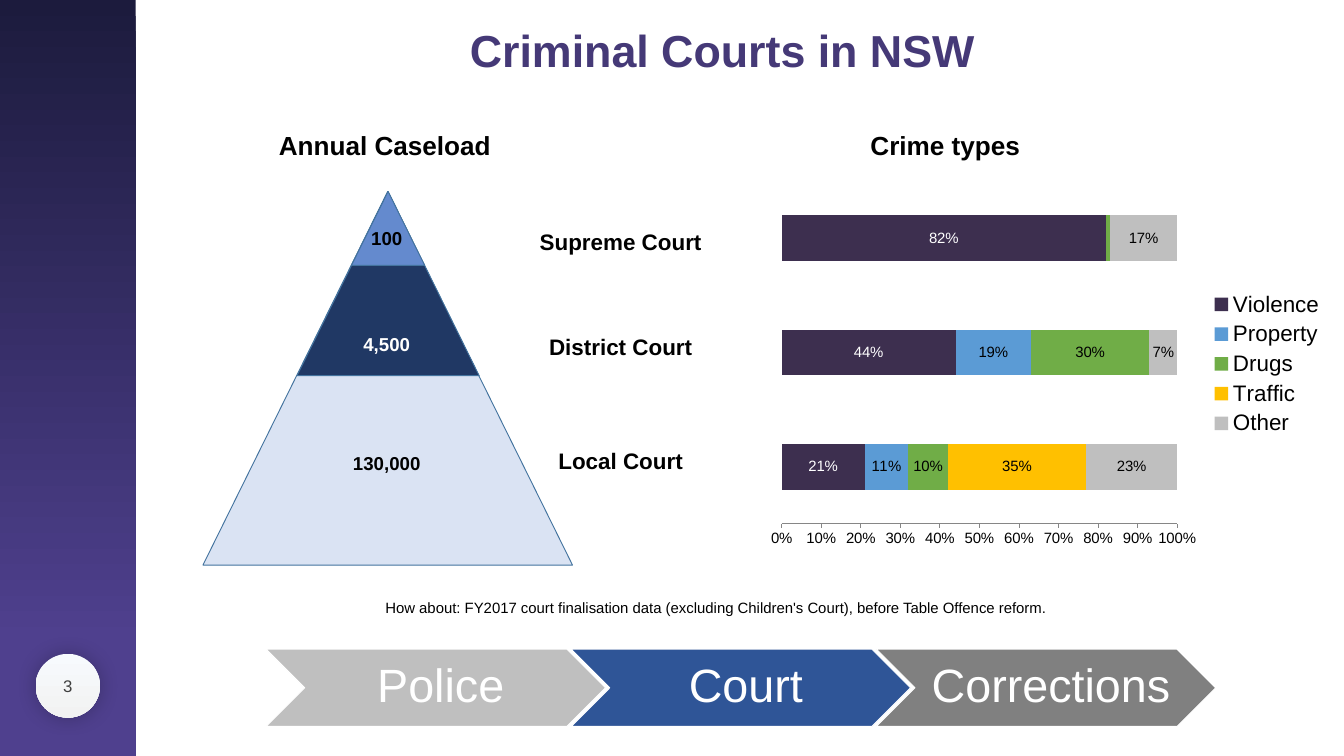
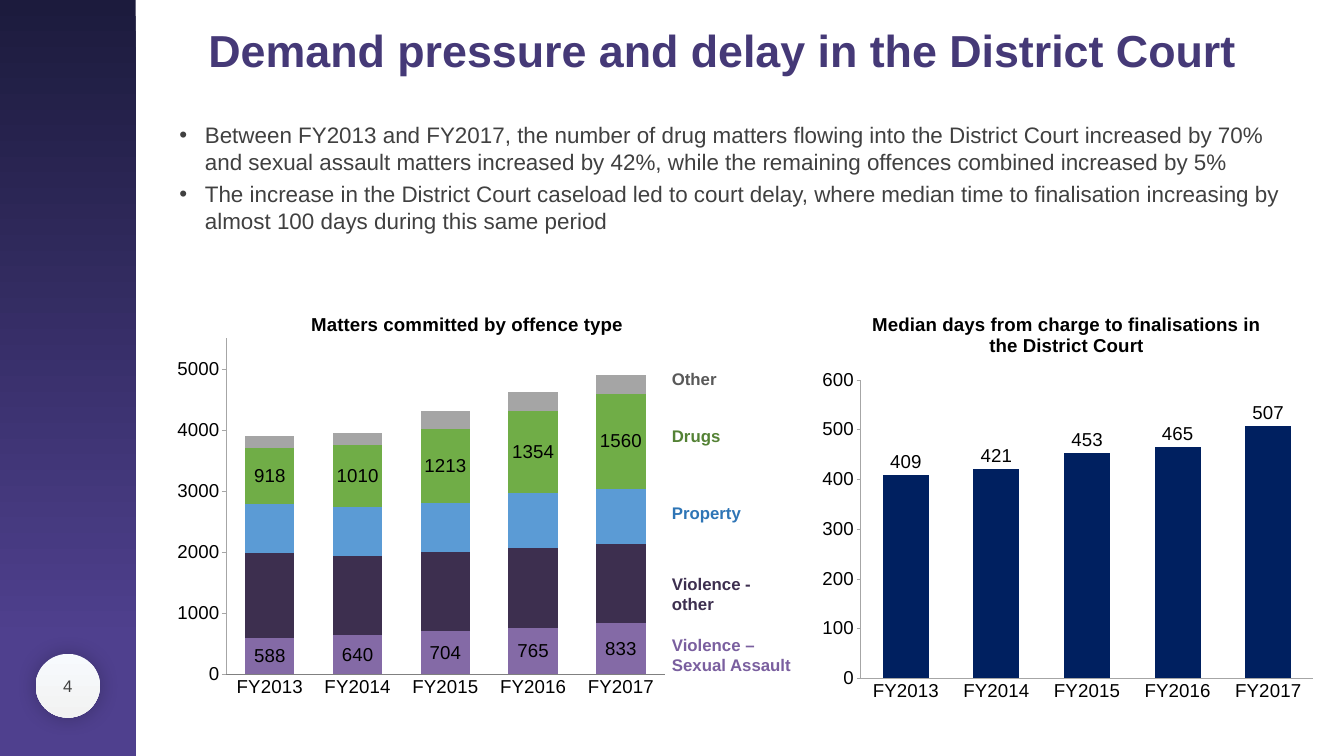
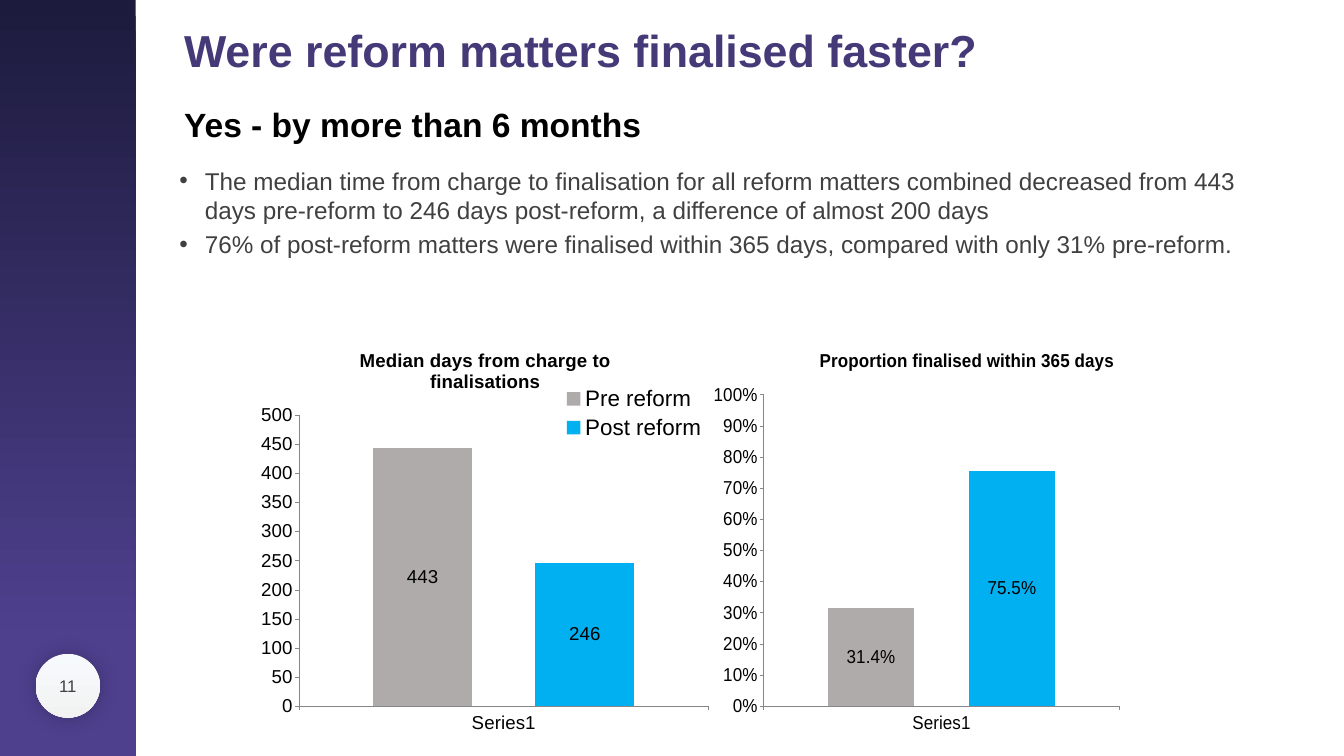
from lxml import etree
from pptx import Presentation
from pptx.chart.data import CategoryChartData
from pptx.dml.color import RGBColor
from pptx.enum.chart import (XL_AXIS_CROSSES, XL_CHART_TYPE, XL_LABEL_POSITION,
                             XL_LEGEND_POSITION, XL_TICK_LABEL_POSITION, XL_TICK_MARK)
from pptx.enum.shapes import MSO_SHAPE
from pptx.enum.text import MSO_ANCHOR, PP_ALIGN
from pptx.oxml.ns import qn
from pptx.util import Pt

PX = 9144  # EMU per px, 100 px to the inch
LEFT, CENTER = PP_ALIGN.LEFT, PP_ALIGN.CENTER
TOP, MIDDLE = MSO_ANCHOR.TOP, MSO_ANCHOR.MIDDLE
RECTANGLE, OVAL = MSO_SHAPE.RECTANGLE, MSO_SHAPE.OVAL
TRIANGLE, CHEVRON = MSO_SHAPE.ISOSCELES_TRIANGLE, MSO_SHAPE.CHEVRON
COLUMN, STACKED = XL_CHART_TYPE.COLUMN_CLUSTERED, XL_CHART_TYPE.COLUMN_STACKED
BAR_100 = XL_CHART_TYPE.BAR_STACKED_100
LABEL_CENTER, LABEL_ABOVE = XL_LABEL_POSITION.CENTER, XL_LABEL_POSITION.OUTSIDE_END
LEGEND_RIGHT, LEGEND_CORNER = XL_LEGEND_POSITION.RIGHT, XL_LEGEND_POSITION.CORNER
TICK_NONE, TICK_OUT = XL_TICK_MARK.NONE, XL_TICK_MARK.OUTSIDE
LABELS_LOW = XL_TICK_LABEL_POSITION.LOW
CROSS_MAX = XL_AXIS_CROSSES.MAXIMUM

FONT = "Arial"
BLACK, WHITE, BODY = "000000", "FFFFFF", "404040"
TITLE_COLOR = "453977"
BAND = ((0, "1C1B3D"), (0.85, "4F408E"))
BADGE = ((0, "F7FAFD"), (1, "F2F2F2"))
VIOLENCE, PROPERTY, DRUGS = "3D2F4F", "5B9BD5", "70AD47"
PRE, POST = "AFABAB", "00B0F0"
AXIS, PALE_AXIS = "868686", "A6A6A6"

# Slide 1: caseload pyramid, crime types and the justice chain
COURTS = [("Supreme Court", 334), ("District Court", 491), ("Local Court", 661)]
TIERS = [(556, "DAE3F3"), (274, "203864"), (110, "648ACE")]
PYRAMID_CENTER, PYRAMID_TOP = 577, 285
CASELOADS = [("100", 333, BLACK), ("4,500", 490, WHITE), ("130,000", 668, BLACK)]
HEADINGS = [("Annual Caseload", 228), ("Crime types", 1062)]
SOURCE_NOTE = ("How about: FY2017 court finalisation data (excluding Children's Court), "
               "before Table Offence reform.")
STAGES = [("Police", "BFBFBF"), ("Court", "2F5597"), ("Corrections", "808080")]
CRIME_TYPES = dict(
    kind=BAR_100, box=(1129, 258, 853, 567), plot=(0.04, 0.02, 0.69, 0.9),
    categories=["1", "2", "3"], gap=150, overlap=100, size=16, number_format="0%",
    hide_categories=True, legend=LEGEND_RIGHT,
    series=[("Violence", [0.21, 0.44, 0.82], VIOLENCE, WHITE),
            ("Property", [0.11, 0.19, 0], PROPERTY, BLACK),
            ("Drugs", [0.1, 0.3, 0.01], DRUGS, BLACK),
            ("Traffic", [0.35, 0, 0], "FFC000", BLACK),
            ("Other", [0.23, 0.07, 0.17], "BFBFBF", BLACK)],
    smallest_label=0.05)

# Slide 2: demand and delay
YEARS = ["FY2013", "FY2014", "FY2015", "FY2016", "FY2017"]
DEMAND = [
    "Between FY2013 and FY2017, the number of drug matters flowing into the District Court "
    "increased by 70% and sexual assault matters increased by 42%, while the remaining "
    "offences combined increased by 5%",
    "The increase in the District Court caseload led to court delay, where median time to "
    "finalisation increasing by almost 100 days during this same period"]
OFFENCES = [("Other", 544, 164, "595959"), ("Drugs", 628, 164, "548235"),
            ("Property", 743, 164, "2E75B6"), ("Violence - other", 849, 164, VIOLENCE),
            ("Violence – Sexual Assault", 940, 201, "7A5F9F")]
COMMITTED = dict(
    kind=STACKED, box=(235, 442, 920, 617), plot=(0.11, 0.1, 0.71, 0.81),
    title="Matters committed by offence type", categories=YEARS, gap=78, overlap=100,
    scale=(0, 5500, 1000), category_line="808080", value_line=PALE_AXIS,
    category_tick=TICK_NONE,
    series=[("Violence – Sexual Assault", [588, 640, 704, 765, 833], "846AA6", BLACK),
            ("Violence - other", [1400, 1300, 1300, 1300, 1300], VIOLENCE, None),
            ("Property", [800, 800, 800, 900, 900], PROPERTY, None),
            ("Drugs", [918, 1010, 1213, 1354, 1560], DRUGS, BLACK),
            ("Other", [200, 200, 300, 300, 300], "A5A5A5", None)])
DELAY = dict(
    kind=COLUMN, box=(1204, 442, 766, 617), plot=(0.1, 0.2, 0.88, 0.72),
    title="Median days from charge to finalisations in the District Court",
    categories=YEARS, gap=97, scale=(0, 600, 100), number_format="#,##0",
    category_line=PALE_AXIS, value_line=PALE_AXIS, category_tick=TICK_NONE,
    label_position=LABEL_ABOVE,
    series=[("Median days", [409, 421, 453, 465, 507], "002060", BLACK)])

# Slide 3: effect of the reform
EFFECTS = [
    "The median time from charge to finalisation for all reform matters combined decreased "
    "from 443 days pre-reform to 246 days post-reform, a difference of almost 200 days",
    "76% of post-reform matters were finalised within 365 days, compared with only 31% "
    "pre-reform."]
REFORM = dict(kind=COLUMN, categories=["Series1"], gap=150, overlap=-64,
              label_position=LABEL_CENTER, low_labels=True)
REFORM_DAYS = dict(
    REFORM, box=(376, 496, 692, 610), plot=(0.1, 0.2, 0.88, 0.71),
    title="Median days from charge to finalisations", scale=(0, 500, 50),
    legend=LEGEND_CORNER, legend_box=(0.66, 0.12, 0.32, 0.15),
    series=[("Pre reform", [443], PRE, BLACK), ("Post reform", [246], POST, BLACK)])
REFORM_SHARE = dict(
    REFORM, box=(1062, 496, 692, 610), plot=(0.02, 0.15, 0.84, 0.76),
    title="Proportion finalised within 365 days", scale=(0, 1, 0.1), number_format="0%",
    label_format="0.0%", values_on_right=True,
    series=[("Pre reform", [0.314], PRE, BLACK), ("Post reform", [0.755], POST, BLACK)])


def rgb(color):
    return RGBColor.from_string(color)


def emu(box):
    return [length * PX for length in box]


def style(font, size, color, bold=False):
    font.name, font.size, font.bold = FONT, Pt(size), bold
    font.color.rgb = rgb(color)


def add_xml(parent, tag, **attributes):
    return etree.SubElement(parent, qn(tag), {k: str(v) for k, v in attributes.items()})


def add_shape(slide, preset, box, fill, line=None):
    """Add a flat shape; fill is a colour or a pair of gradient stops."""
    shape = slide.shapes.add_shape(preset, *emu(box))
    shape.shadow.inherit = False
    if isinstance(fill, str):
        shape.fill.solid()
        shape.fill.fore_color.rgb = rgb(fill)
    else:
        shape.fill.gradient()
        shape.fill.gradient_angle = 270
        for stop, (position, color) in zip(shape.fill.gradient_stops, fill):
            stop.position = position
            stop.color.rgb = rgb(color)
    if line:
        shape.line.color.rgb = rgb(line)
        shape.line.width = Pt(1)
    else:
        shape.line.fill.background()
    return shape


def add_text(slide, text, box, size, color=BLACK, bold=False, align=CENTER, anchor=TOP):
    frame = slide.shapes.add_textbox(*emu(box)).text_frame
    frame.word_wrap = True
    frame.vertical_anchor = anchor
    frame.text = text
    for paragraph in frame.paragraphs:
        paragraph.alignment = align
        style(paragraph.font, size, color, bold)
    return frame


def add_bullets(slide, points, top, size):
    frame = add_text(slide, "\n".join(points), (257, top, 1672, 180), size, BODY, align=LEFT)
    for paragraph in frame.paragraphs:
        paragraph.space_after = Pt(6)
        properties = paragraph._p.get_or_add_pPr()
        properties.set("marL", str(38 * PX))
        properties.set("indent", str(-38 * PX))
        add_xml(properties, "a:buFont", typeface=FONT)
        add_xml(properties, "a:buChar", char="•")


def add_slide(deck, number, title, align=CENTER):
    """Add a slide with the side band, number badge and title."""
    slide = deck.slides.add_slide(deck.slide_layouts[6])
    add_shape(slide, RECTANGLE, (0, 0, 202, 1125), BAND)
    badge = add_shape(slide, OVAL, (53, 973, 96, 95), BADGE)
    glow = add_xml(badge._element.spPr.find(qn("a:effectLst")), "a:outerShdw",
                   blurRad=Pt(22), dist=0, dir=0, algn="ctr", rotWithShape=0)
    add_xml(add_xml(glow, "a:srgbClr", val=BLACK), "a:alpha", val=24000)
    add_text(slide, number, (53, 981, 96, 78), 18, BODY, anchor=MIDDLE)
    add_text(slide, title, (264, 29, 1622, 91), 48, TITLE_COLOR, True, align)
    return slide


def set_layout(parent, index, box, inner=False):
    """Fix a chart part at fractions of the chart's size."""
    for previous in parent.findall(qn("c:layout")):
        parent.remove(previous)
    layout = etree.Element(qn("c:layout"))
    parent.insert(index, layout)
    manual = add_xml(layout, "c:manualLayout")
    if inner:
        add_xml(manual, "c:layoutTarget", val="inner")
    for side in "xy":
        add_xml(manual, f"c:{side}Mode", val="edge")
    for side, fraction in zip("xywh", box):
        add_xml(manual, f"c:{side}", val=fraction)


def style_series(series, color, label_color, size, label_format, position, smallest):
    series.format.fill.solid()
    series.format.fill.fore_color.rgb = rgb(color)
    series.invert_if_negative = False
    if not label_color:
        return
    labels = series.data_labels
    labels.show_value = True
    labels.number_format, labels.number_format_is_linked = label_format, False
    style(labels.font, size, label_color)
    if position is not None:
        labels.position = position
    hidden = [i for i, value in enumerate(series.values) if value < smallest]
    for place, index in enumerate(hidden):
        label = etree.Element(qn("c:dLbl"))
        labels._element.insert(place, label)
        add_xml(label, "c:idx", val=index)
        add_xml(label, "c:delete", val=1)


def style_axis(axis, line, tick):
    axis.has_major_gridlines = False
    axis.major_tick_mark, axis.minor_tick_mark = tick, TICK_NONE
    axis.format.line.color.rgb = rgb(line)
    axis.format.line.width = Pt(0.75)


def add_chart(slide, kind, box, plot, categories, series, gap, overlap=0, title=None, size=20,
              scale=None, number_format="General", label_format=None, label_position=None,
              smallest_label=0, legend=None, legend_box=None, hide_categories=False,
              low_labels=False, values_on_right=False, category_line=AXIS, value_line=AXIS,
              category_tick=TICK_OUT):
    data = CategoryChartData()
    data.categories = categories
    for name, values, *_ in series:
        data.add_series(name, values)
    chart = slide.shapes.add_chart(kind, *emu(box), data).chart
    style(chart.font, size, BLACK)

    chart.has_title = bool(title)
    if title:
        chart.chart_title.include_in_layout = False
        chart.chart_title.text_frame.text = title
        style(chart.chart_title.text_frame.paragraphs[0].font, size, BLACK, True)

    bars = chart.plots[0]
    bars.gap_width, bars.overlap, bars.vary_by_categories = gap, overlap, False
    for drawn, (_, _, color, label_color) in zip(bars.series, series):
        style_series(drawn, color, label_color, size, label_format or number_format,
                     label_position, smallest_label)

    category_axis, value_axis = chart.category_axis, chart.value_axis
    style_axis(category_axis, category_line, category_tick)
    style_axis(value_axis, value_line, TICK_OUT)
    category_axis.visible = not hide_categories
    if low_labels:
        category_axis.tick_label_position = LABELS_LOW
    if values_on_right:
        category_axis.crosses = CROSS_MAX
    value_axis.tick_labels.number_format = number_format
    value_axis.tick_labels.number_format_is_linked = False
    if scale:
        value_axis.minimum_scale, value_axis.maximum_scale, value_axis.major_unit = scale

    set_layout(chart._chartSpace.chart.plotArea, 0, plot, inner=True)
    chart.has_legend = legend is not None
    if chart.has_legend:
        chart.legend.position = legend
        chart.legend.include_in_layout = legend_box is not None
        style(chart.legend.font, 24, BLACK)
        if legend_box:
            set_layout(chart.legend._element, 1, legend_box)


def build_courts(deck):
    slide = add_slide(deck, "3", "Criminal Courts in NSW")
    for height, color in TIERS:
        width = round(height * 0.99)
        add_shape(slide, TRIANGLE, (PYRAMID_CENTER - width // 2, PYRAMID_TOP, width, height),
                  color, "43739E")
    for i, (stage, color) in enumerate(STAGES):
        chevron = add_shape(slide, CHEVRON, (396 + 454 * i, 966, 505, 115), color, WHITE)
        frame = chevron.text_frame
        frame.word_wrap, frame.vertical_anchor = True, MIDDLE
        frame.margin_left, frame.margin_right = 22 * PX, 7 * PX
        frame.text = stage
        frame.paragraphs[0].alignment = CENTER
        frame.paragraphs[0].line_spacing = 0.9
        style(frame.paragraphs[0].font, 50, WHITE)
    for court, top in COURTS:
        add_text(slide, court, (756, top, 335, 50), 24, bold=True)
    for heading, left in HEADINGS:
        add_text(slide, heading, (left, 188, 689, 57), 28, bold=True)
    for caseload, top, color in CASELOADS:
        add_text(slide, caseload, (445, top, 261, 44), 20, color, True)
    add_text(slide, SOURCE_NOTE, (536, 886, 1059, 37), 16)
    add_chart(slide, **CRIME_TYPES)


def build_demand(deck):
    slide = add_slide(deck, "4", "Demand pressure and delay in the District Court")
    add_bullets(slide, DEMAND, 175, 24)
    add_chart(slide, **COMMITTED)
    add_chart(slide, **DELAY)
    for offence, top, width, color in OFFENCES:
        add_text(slide, offence, (990, top, width, 40), 18, color, True, LEFT)


def build_reform(deck):
    slide = add_slide(deck, "11", "Were reform matters finalised faster?", LEFT)
    add_text(slide, "Yes - by more than 6 months", (264, 149, 1000, 71), 36, bold=True,
             align=LEFT)
    add_chart(slide, **REFORM_DAYS)
    add_chart(slide, **REFORM_SHARE)
    add_bullets(slide, EFFECTS, 242, 26)


def main():
    deck = Presentation()
    deck.slide_width, deck.slide_height = emu((2000, 1125))
    build_courts(deck)
    build_demand(deck)
    build_reform(deck)
    deck.save("out.pptx")


if __name__ == "__main__":
    main()
